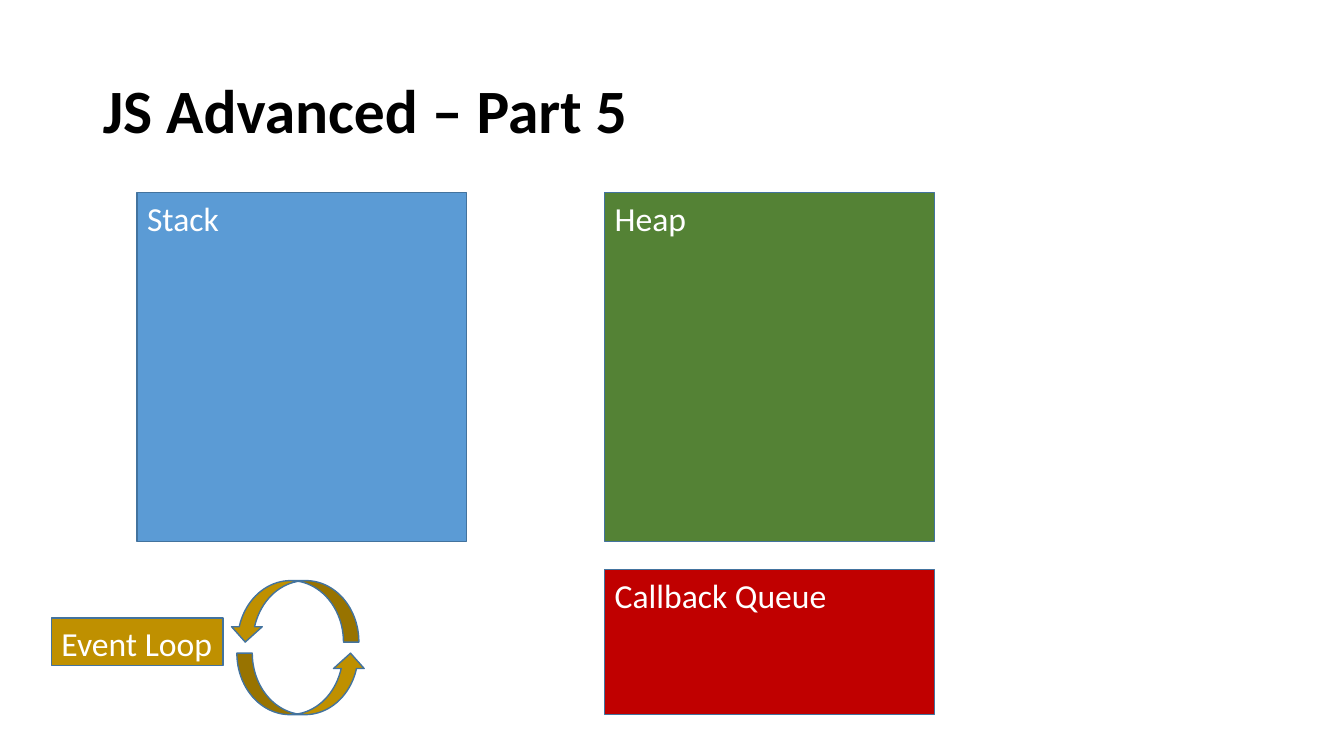
import pptx
import pptx.util
import pptx.dml.color
import pptx.enum.shapes
import pptx.enum.text

SHAPES = pptx.enum.shapes.MSO_SHAPE
ANCHORS = pptx.enum.text.MSO_ANCHOR


def color(code):
    return pptx.dml.color.RGBColor.from_string(code)


def write(box, text, size=24, ink="FFFFFF", bold=False, anchor=ANCHORS.TOP, wrap=True, spacing=1.0):
    frame = box.text_frame
    frame.word_wrap = wrap
    frame.vertical_anchor = anchor
    para = frame.paragraphs[0]
    para.alignment = pptx.enum.text.PP_ALIGN.LEFT
    para.line_spacing = spacing
    span = para.add_run()
    span.text = text
    span.font.name = "Calibri"
    span.font.size = pptx.util.Pt(size)
    span.font.bold = bold
    span.font.color.rgb = color(ink)


class Board:
    columns = 100
    rows = 100
    outline = "43739E"
    gold = "BF9000"

    def __init__(self, deck):
        self.deck = deck
        self.page = deck.slides.add_slide(deck.slide_layouts.get_by_name("Title Only"))

    def place(self, left, top, width, height):
        column = self.deck.slide_width / self.columns
        row = self.deck.slide_height / self.rows
        return [round(length) for length in (left * column, top * row, width * column, height * row)]

    def title(self, text, *area):
        box = self.page.shapes.title
        box.left, box.top, box.width, box.height = self.place(*area)
        write(box, text, size=44, ink="000000", bold=True, anchor=ANCHORS.MIDDLE, spacing=0.9)

    def shape(self, kind, fill, *area):
        box = self.page.shapes.add_shape(kind, *self.place(*area))
        box.shadow.inherit = False
        box.fill.solid()
        box.fill.fore_color.rgb = color(fill)
        box.line.color.rgb = color(self.outline)
        box.line.width = pptx.util.Pt(1)
        return box

    def panel(self, text, fill, *area, wrap=True):
        write(self.shape(SHAPES.RECTANGLE, fill, *area), text, wrap=wrap)

    def loop_arrow(self, left, top, turn=0):
        arrow = self.shape(SHAPES.CURVED_UP_ARROW, self.gold, left, top, 9.6, 8.13)
        arrow.rotation = turn


def main():
    deck = pptx.Presentation()
    deck.slide_width = pptx.util.Inches(13.33)
    deck.slide_height = pptx.util.Inches(7.5)
    board = Board(deck)
    stack_left, heap_left, panel_width = 10.2, 45, 24.53
    memory_top, memory_height = 25.47, 46.13

    board.title("JS Advanced – Part 5", 6.9, 5.33, 86.25, 19.33)
    for text, fill, left in (("Stack", "5B9BD5", stack_left), ("Heap", "548235", heap_left)):
        board.panel(text, fill, left, memory_top, panel_width, memory_height)
    board.panel("Callback Queue", "C00000", heap_left, 75.33, panel_width, 19.2)
    board.loop_arrow(17.63, 86.4)
    board.loop_arrow(17.1, 76.8, turn=180)
    board.panel("Event Loop", board.gold, 3.83, 81.73, 12.75, 6.27, wrap=False)
    deck.save("out.pptx")


if __name__ == "__main__":
    main()
